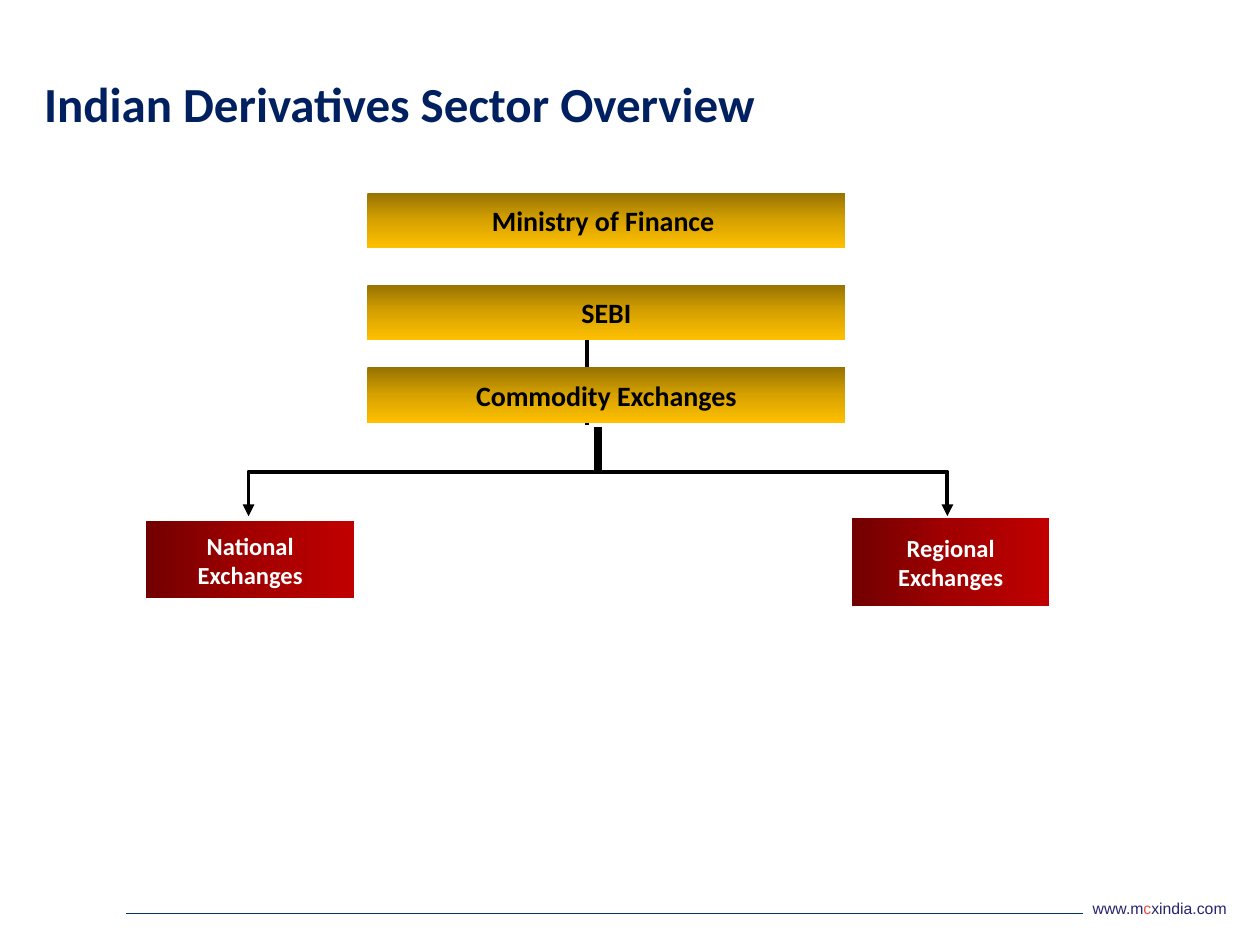
from copy import deepcopy
from dataclasses import dataclass

from pptx import Presentation
from pptx.dml.color import RGBColor as Rgb
from pptx.enum.shapes import MSO_CONNECTOR as Conn, MSO_SHAPE as Form
from pptx.enum.text import MSO_ANCHOR as Anchor, PP_ALIGN as Align
from pptx.oxml.ns import qn
from pptx.oxml.xmlchemy import OxmlElement as Node
from pptx.util import Pt


@dataclass(frozen=True)
class Theme:
    font: str = "Calibri"
    foot: str = "Arial"
    navy: str = "002060"
    black: str = "000000"
    white: str = "FFFFFF"
    rule: str = "003366"
    link: str = "252571"
    spot: str = "E84C40"
    gold: tuple = ("977200", "D7A200", "FFC000")
    red: tuple = ("720000", "A20000", "C00000")
    head: int = 28
    body: int = 16
    leaf: int = 14
    note: int = 9


@dataclass(frozen=True)
class Box:
    text: str
    left: float
    top: float
    width: float
    height: float
    fill: tuple
    angle: int
    ink: str
    size: int


T = Theme()


def style(run, **look) -> None:
    color = look.pop("color")
    for key, value in look.items():
        setattr(run.font, key, value)
    run.font.color.rgb = Rgb.from_string(color)


def frame(shape, anchor, pads: tuple, wrap: bool = True):
    text = shape.text_frame
    sides = ("left", "top", "right", "bottom")
    look = {f"margin_{side}": Pt(pad) for side, pad in zip(sides, pads)}
    look |= {"word_wrap": wrap, "vertical_anchor": anchor}
    for key, value in look.items():
        setattr(text, key, value)
    return text


def shade(fill, colors: tuple, angle: int) -> None:
    fill.gradient()
    fill.gradient_angle = angle
    # A third stop goes between the two default ones
    stops = fill.gradient_stops
    first = stops[0]
    nodes = fill._fill._gradFill.gsLst
    nodes.insert(1, deepcopy(nodes[0]))
    for stop, color, place in zip(fill.gradient_stops, colors, (0, 0.5, 1)):
        stop.color.rgb = Rgb.from_string(color)
        stop.color.brightness = 0
        stop.position = place


def draw_box(slide, box: Box) -> None:
    shape = slide.shapes.add_shape(
        Form.RECTANGLE, Pt(box.left), Pt(box.top), Pt(box.width), Pt(box.height))
    shape.shadow.inherit = False
    shape.line.fill.background()
    shade(shape.fill, box.fill, box.angle)
    para = frame(shape, Anchor.MIDDLE, (6.5, 3, 6.5, 3)).paragraphs[0]
    para.text = box.text
    para.alignment = Align.CENTER
    for run in para.runs:
        style(run, name=T.font, size=Pt(box.size), bold=True, color=box.ink)


def draw_line(slide, start: tuple, end: tuple, color: str, width: float,
              kind=Conn.STRAIGHT):
    line = slide.shapes.add_connector(kind, *map(Pt, start + end))
    line.line.color.rgb = Rgb.from_string(color)
    line.line.width = Pt(width)
    line.element.spPr.append(Node("a:effectLst"))
    return line


def draw_branch(slide, start: tuple, end: tuple) -> None:
    """Elbow arrow that leaves downward: a quarter-turned connector."""
    (x1, y1), (x2, y2) = start, end
    mid_x, mid_y = (x1 + x2) / 2, (y1 + y2) / 2
    wide, tall = (y2 - y1) / 2, abs(x2 - x1) / 2
    side = 1 if x2 > x1 else -1
    line = draw_line(slide, (mid_x + side * wide, mid_y - tall),
                     (mid_x - side * wide, mid_y + tall),
                     T.black, 2.25, Conn.ELBOW)
    turn = 270 if side > 0 else 90
    line.element.spPr.find(qn("a:xfrm")).set("rot", str(turn * 60000))
    tail = Node("a:tailEnd")
    tail.set("type", "triangle")
    line.element.spPr.find(qn("a:ln")).append(tail)


def draw_title(slide, text: str) -> None:
    title = slide.shapes.title
    spot = {"left": 18, "top": 20, "width": 474, "height": 78}
    for key, value in spot.items():
        setattr(title, key, Pt(value))
    para = frame(title, Anchor.MIDDLE, (7.2, 3.6, 7.2, 3.6)).paragraphs[0]
    para.text = text
    para.alignment = Align.LEFT
    style(para.runs[0], name=T.font, size=Pt(T.head), bold=True, color=T.navy)


def draw_foot(slide) -> None:
    draw_line(slide, (72, 522), (619, 522), T.rule, 0.75)
    box = slide.shapes.add_textbox(Pt(612), Pt(510), Pt(96), Pt(18))
    para = frame(box, Anchor.TOP, (0, 3.6, 7.2, 3.6)).paragraphs[0]
    para.alignment = Align.RIGHT
    for text, color in (("www.m", T.link), ("c", T.spot), ("xindia.com", T.link)):
        run = para.add_run()
        run.text = text
        style(run, name=T.foot, size=Pt(T.note), color=color)


def main() -> None:
    deck = Presentation()
    deck.slide_width, deck.slide_height = Pt(720), Pt(540)
    slide = deck.slides.add_slide(deck.slide_layouts[5])
    draw_foot(slide)

    # Chain of authority, with the link behind its boxes
    draw_line(slide, (335.5, 166), (335.5, 242.6), T.black, 2.25)
    chain = (("Ministry of Finance ", 110.2), ("SEBI", 162.7),
             ("Commodity Exchanges", 210))
    for text, top in chain:
        draw_box(slide, Box(text, 210, top, 273, 31.7, T.gold, 270,
                            T.black, T.body))

    # Kinds of exchange
    leaves = (("National\vExchanges", 83.5, 298, 119, 44),
              ("Regional Exchanges", 487, 296, 112.5, 50.4))
    for leaf in leaves:
        draw_box(slide, Box(*leaf, T.red, 0, T.white, T.leaf))
    draw_branch(slide, (342.7, 244), (142, 295))
    draw_branch(slide, (340.6, 244), (541.4, 295))

    draw_title(slide, "Indian Derivatives Sector Overview")
    deck.save("out.pptx")


if __name__ == "__main__":
    main()
